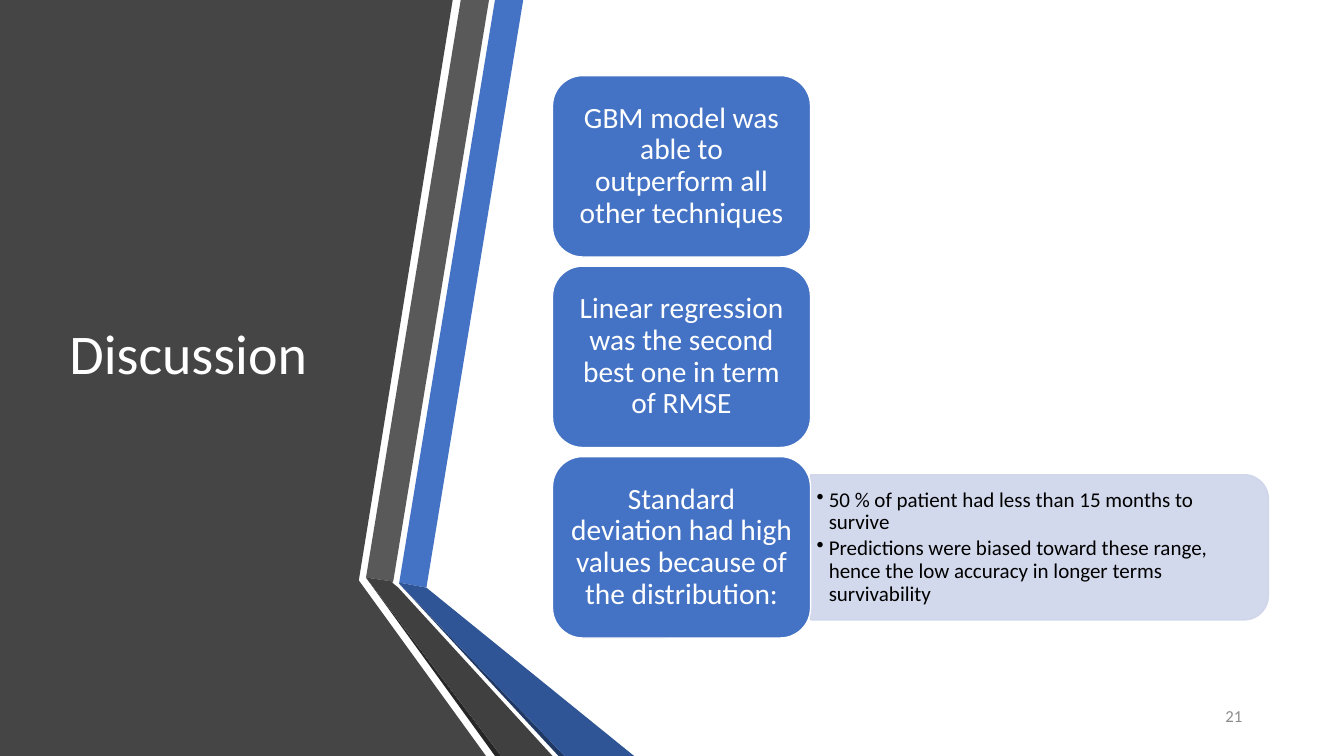
from dataclasses import dataclass

from lxml import etree
from pptx import Presentation
from pptx.dml.color import RGBColor
from pptx.enum.shapes import MSO_SHAPE
from pptx.enum.text import MSO_ANCHOR, PP_ALIGN
from pptx.oxml.ns import qn
from pptx.util import Inches, Pt

ROUNDED = MSO_SHAPE.ROUNDED_RECTANGLE
ROUNDED_TOP = MSO_SHAPE.ROUND_2_SAME_RECTANGLE
MIDDLE = MSO_ANCHOR.MIDDLE
LEFT, CENTER, RIGHT = PP_ALIGN.LEFT, PP_ALIGN.CENTER, PP_ALIGN.RIGHT


@dataclass(frozen=True)
class Theme:
    font: str = "Calibri"
    white: str = "FFFFFF"
    black: str = "000000"
    number: str = "8C8C8C"
    backdrop: str = "454545"
    blue: str = "4472C4"
    dark_blue: str = "2F5597"
    navy: str = "203864"
    gray: str = "595959"
    dark_gray: str = "404040"
    charcoal: str = "262626"
    pale_blue: str = "CFD5EA"
    title_size: float = 40
    card_size: float = 21
    detail_size: float = 15
    number_size: float = 12


@dataclass(frozen=True)
class Area:
    left: float
    top: float
    width: float
    height: float

    def lengths(self) -> list:
        return [Inches(v) for v in (self.left, self.top, self.width, self.height)]


@dataclass(frozen=True)
class Outline:
    color: str
    points: tuple


@dataclass(frozen=True)
class TextStyle:
    size: float
    color: str
    align: PP_ALIGN = LEFT
    line_spacing: float = 0.9
    space_after: float = 0
    bullet_indent: float = 0
    margins: tuple = (0.1, 0.05)


THEME = Theme()

BACKDROP = Outline(THEME.backdrop, (
    (0, 0), (4.49, 0), (3.56, 5.75), (3.56, 5.76), (4.82, 7.5), (0, 7.5)))

# Folded ribbons, back to front
RIBBONS = (
    Outline(THEME.blue, ((3.96, 5.78), (4.23, 5.83), (5.19, 0), (4.91, 0))),
    Outline(THEME.gray, ((4.85, 0), (4.57, 0), (3.63, 5.73), (3.9, 5.77))),
    Outline(THEME.charcoal, ((3.63, 5.73), (4.91, 7.5), (4.97, 7.5))),
    Outline(THEME.navy, ((3.96, 5.79), (5.54, 7.5), (5.6, 7.5))),
    Outline(THEME.dark_blue, (
        (3.96, 5.78), (3.96, 5.79), (5.6, 7.5), (6.29, 7.5), (4.23, 5.83))),
    Outline(THEME.dark_gray, (
        (5.48, 7.5), (3.95, 5.83), (3.89, 5.78), (3.9, 5.77),
        (3.63, 5.73), (4.97, 7.5))),
)

FINDINGS = (
    "GBM model was able to outperform all other techniques",
    "Linear regression was the second best one in term of RMSE",
    "Standard deviation had high values because of the distribution:",
)
DETAILS = (
    "50 % of patient had less than 15 months to survive",
    "Predictions were biased toward these range, hence the low accuracy "
    "in longer terms survivability",
)

FIRST_CARD = Area(5.48, 0.75, 2.56, 1.8)
CARD_PITCH = 1.89
DETAIL_PANEL = Area(8.04, 4.71, 4.54, 1.44)

TITLE_STYLE = TextStyle(THEME.title_size, THEME.white)
NUMBER_STYLE = TextStyle(THEME.number_size, THEME.number, RIGHT, line_spacing=1)
CARD_STYLE = TextStyle(THEME.card_size, THEME.white, CENTER, margins=(0.09, 0.04))
DETAIL_STYLE = TextStyle(THEME.detail_size, THEME.black, space_after=2.25,
                         bullet_indent=0.12, margins=(0.06, 0.03))


def paint(shape, fill: str, line: str | None = None) -> None:
    shape.shadow.inherit = False
    shape.fill.solid()
    shape.fill.fore_color.rgb = RGBColor.from_string(fill)
    if line:
        shape.line.color.rgb = RGBColor.from_string(line)
        shape.line.width = Pt(1)
    else:
        shape.line.fill.background()


def set_opacity(shape, percent: int) -> None:
    """Apply one opacity to the fill and line colours."""
    for color in shape._element.spPr.iter(qn("a:srgbClr")):
        etree.SubElement(color, qn("a:alpha")).set("val", str(percent * 1000))


def add_bullet(para, indent: float) -> None:
    properties = para._p.get_or_add_pPr()
    properties.set("marL", str(Inches(indent)))
    properties.set("indent", str(-Inches(indent)))
    etree.SubElement(properties, qn("a:buChar")).set("char", "•")


def write(shape, texts: tuple, style: TextStyle) -> None:
    frame = shape.text_frame
    frame.word_wrap = True
    frame.vertical_anchor = MIDDLE
    side, end = (Inches(margin) for margin in style.margins)
    frame.margin_left = frame.margin_right = side
    frame.margin_top = frame.margin_bottom = end
    for index, text in enumerate(texts):
        para = frame.add_paragraph() if index else frame.paragraphs[0]
        para.text = text
        para.alignment = style.align
        para.line_spacing = style.line_spacing
        para.space_after = Pt(style.space_after)
        para.font.name = THEME.font
        para.font.size = Pt(style.size)
        para.font.color.rgb = RGBColor.from_string(style.color)
        if style.bullet_indent:
            add_bullet(para, style.bullet_indent)


def add_outline(shapes, outline: Outline) -> None:
    start, *others = [(Inches(x), Inches(y)) for x, y in outline.points]
    builder = shapes.build_freeform(*start)
    builder.add_line_segments(others, close=True)
    paint(builder.convert_to_shape(), outline.color)


def add_text(shapes, area: Area, texts: tuple, style: TextStyle) -> None:
    write(shapes.add_textbox(*area.lengths()), texts, style)


def add_detail_panel(shapes, area: Area) -> None:
    # A quarter turn puts the two rounded corners on the right
    upright = Area(area.left + (area.width - area.height) / 2,
                   area.top + (area.height - area.width) / 2,
                   area.height, area.width)
    panel = shapes.add_shape(ROUNDED_TOP, *upright.lengths())
    panel.rotation = 90
    paint(panel, THEME.pale_blue, THEME.pale_blue)
    set_opacity(panel, 90)
    text_area = Area(area.left, area.top + 0.07, area.width - 0.07, area.height - 0.14)
    add_text(shapes, text_area, DETAILS, DETAIL_STYLE)


def add_card(shapes, row: int, finding: str) -> None:
    area = Area(FIRST_CARD.left, FIRST_CARD.top + row * CARD_PITCH,
                FIRST_CARD.width, FIRST_CARD.height)
    card = shapes.add_shape(ROUNDED, *area.lengths())
    paint(card, THEME.blue, THEME.white)
    write(card, (finding,), CARD_STYLE)


def main() -> None:
    deck = Presentation()
    deck.slide_width, deck.slide_height = Inches(13.33), Inches(7.5)
    page = deck.slides.add_slide(deck.slide_layouts[6])

    # Dark backdrop and ribbons
    add_outline(page.shapes, BACKDROP)
    ribbons = page.shapes.add_group_shape()
    for ribbon in RIBBONS:
        add_outline(ribbons.shapes, ribbon)

    # Title and slide number
    add_text(page.shapes, Area(0.59, 0.75, 3.04, 5.58), ("Discussion",), TITLE_STYLE)
    add_text(page.shapes, Area(11.23, 6.9, 1.19, 0.4), ("21",), NUMBER_STYLE)

    # Findings, with details beside the last one
    findings = page.shapes.add_group_shape()
    add_detail_panel(findings.shapes, DETAIL_PANEL)
    for row, finding in enumerate(FINDINGS):
        add_card(findings.shapes, row, finding)

    deck.save("out.pptx")


if __name__ == "__main__":
    main()
